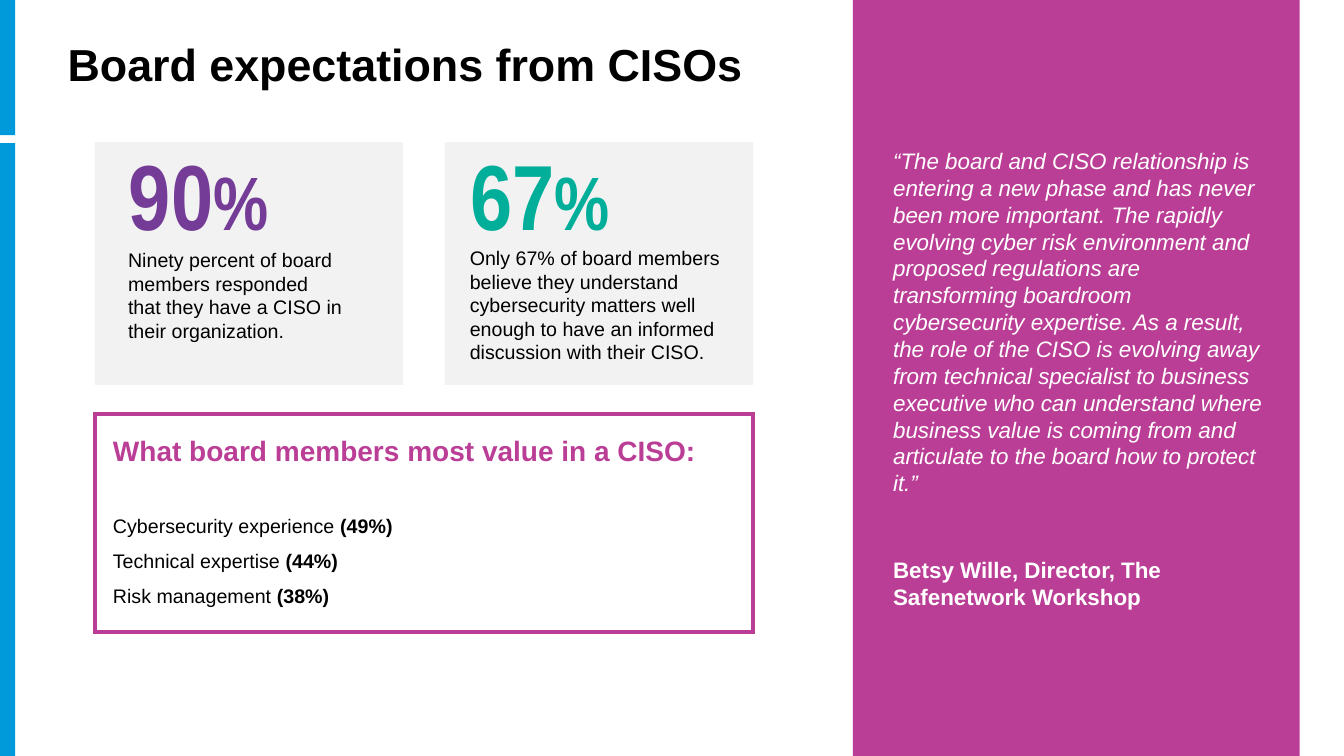
from dataclasses import dataclass

from pptx import Presentation
from pptx.dml.color import RGBColor
from pptx.enum.shapes import MSO_SHAPE
from pptx.enum.text import MSO_ANCHOR, MSO_AUTO_SIZE, PP_ALIGN
from pptx.util import Pt
from lxml import etree

PX = 9144  # 100 px to the inch
RECT = MSO_SHAPE.RECTANGLE
TOP, MID = MSO_ANCHOR.TOP, MSO_ANCHOR.MIDDLE
LEFT = PP_ALIGN.LEFT
FIXED = MSO_AUTO_SIZE.NONE
NS = "{http://schemas.openxmlformats.org/drawingml/2006/main}"

BLACK = RGBColor(0x00, 0x00, 0x00)
WHITE = RGBColor(0xFF, 0xFF, 0xFF)
BLUE = RGBColor(0x00, 0x9A, 0xDA)
GREY = RGBColor(0xF2, 0xF2, 0xF2)
PINK = RGBColor(0xBB, 0x3E, 0x96)
PURPLE = RGBColor(0x74, 0x3C, 0x97)
TEAL = RGBColor(0x00, 0xAE, 0x9A)

Area = tuple[int, int, int, int]


@dataclass
class Run:
    text: str
    size: int
    color: RGBColor = BLACK
    bold: bool = False
    italic: bool = False
    face: str = "Arial"


@dataclass
class Para:
    runs: list[Run]
    line: float = 1.0
    before: int = 0


@dataclass
class Card:
    left: int
    value: str
    color: RGBColor
    figure: Area
    label: Area
    lines: list[str]


CARDS = [
    Card(94, "90", PURPLE, (118, 161, 175, 63), (102, 231, 295, 137),
         ["Ninety percent of board members responded",
          "that they have a CISO in their organization."]),
    Card(441, "67", TEAL, (457, 161, 196, 63), (441, 229, 306, 137),
         ["Only 67% of board members believe they understand cybersecurity "
          "matters well enough to have an informed discussion with their CISO."]),
]
VALUES = [("Cybersecurity experience ", "(49%)"),
          ("Technical expertise ", "(44%)"),
          ("Risk management ", "(38%)")]
QUOTE = (
    "“The board and CISO relationship is entering a new phase and has never "
    "been more important. The rapidly evolving cyber risk environment and "
    "proposed regulations are transforming boardroom cybersecurity expertise. "
    "As a result, the role of the CISO is evolving away from technical "
    "specialist to business executive who can understand where business value "
    "is coming from and articulate to the board how to protect it.”")
SPEAKER = "Betsy Wille, Director, The Safenetwork Workshop"


def assign(item, form: dict) -> None:
    for name, value in form.items():
        setattr(item, name, value)


def place(shape, area: Area) -> None:
    names = ("left", "top", "width", "height")
    assign(shape, {name: px * PX for name, px in zip(names, area)})


def block(slide, area: Area, color: RGBColor) -> None:
    shape = slide.shapes.add_shape(RECT, *(px * PX for px in area))
    shape.shadow.inherit = False
    shape.fill.solid()
    shape.fill.fore_color.rgb = color
    shape.line.fill.background()


def write(shape, paras: list[Para], inset: Area, anchor=TOP) -> None:
    frame = shape.text_frame
    left, top, right, base = (px * PX for px in inset)
    assign(frame, {"word_wrap": True, "auto_size": FIXED,
                   "vertical_anchor": anchor, "margin_left": left,
                   "margin_top": top, "margin_right": right,
                   "margin_bottom": base})
    for i, para in enumerate(paras):
        item = frame.add_paragraph() if i else frame.paragraphs[0]
        assign(item, {"alignment": LEFT, "line_spacing": para.line,
                      "space_before": Pt(para.before), "space_after": Pt(0)})
        if shape.is_placeholder:
            props = item._p.get_or_add_pPr()
            props.set("marL", "0")
            props.set("indent", "0")
            etree.SubElement(props, NS + "buNone")
        for run in para.runs:
            part = item.add_run()
            part.text = run.text
            assign(part.font, {"name": run.face, "size": Pt(run.size),
                               "bold": run.bold, "italic": run.italic})
            part.font.color.rgb = run.color


def label(slide, area: Area, paras: list[Para], inset: Area, anchor=TOP) -> None:
    box = slide.shapes.add_textbox(*(px * PX for px in area))
    write(box, paras, inset, anchor)


def main() -> None:
    deck = Presentation()
    assign(deck, {"slide_width": 1333 * PX, "slide_height": 750 * PX})
    slide = deck.slides.add_slide(deck.slide_layouts[1])
    title, body = slide.placeholders

    # Left stripes and quote panel
    block(slide, (0, 0, 15, 134), BLUE)
    block(slide, (0, 142, 15, 608), BLUE)
    block(slide, (846, 0, 443, 750), PINK)

    # Title
    place(title, (67, 0, 1200, 133))
    head = Run("Board expectations from CISOs", 32, bold=True)
    write(title, [Para([head], 0.9)], (0, 0, 0, 0), MID)

    # Figure cards
    for card in CARDS:
        block(slide, (card.left, 141, 306, 241), GREY)
        runs = [Run(text, size, card.color, True, face="Arial Narrow")
                for text, size in ((card.value, 66), ("%", 54))]
        label(slide, card.figure, [Para(runs)], (10, 15, 10, 15), MID)
        label(slide, card.label, [Para([Run(line, 14)]) for line in card.lines],
              (25, 15, 25, 15))

    # Framed list with square corners
    place(body, (94, 411, 653, 216))
    body.fill.solid()
    body.fill.fore_color.rgb = WHITE
    body.line.color.rgb = PINK
    body.line.width = Pt(3)
    etree.SubElement(body.line._get_or_add_ln(), NS + "miter", lim="800000")
    head = Run("What board members most value in a CISO:", 20, PINK, True)
    items = [Para([Run(name, 14), Run(share, 14, bold=True)], 1.5,
                  0 if i else 25)
             for i, (name, share) in enumerate(VALUES)]
    write(body, [Para([head]), *items], (18, 19, 25, 5))

    # Quote and its speaker
    label(slide, (876, 141, 390, 475),
          [Para([Run(QUOTE, 16, WHITE, italic=True)]),
           Para([Run(SPEAKER, 16, WHITE, True)], before=43)],
          (10, 5, 10, 5))

    deck.save("out.pptx")


if __name__ == "__main__":
    main()
